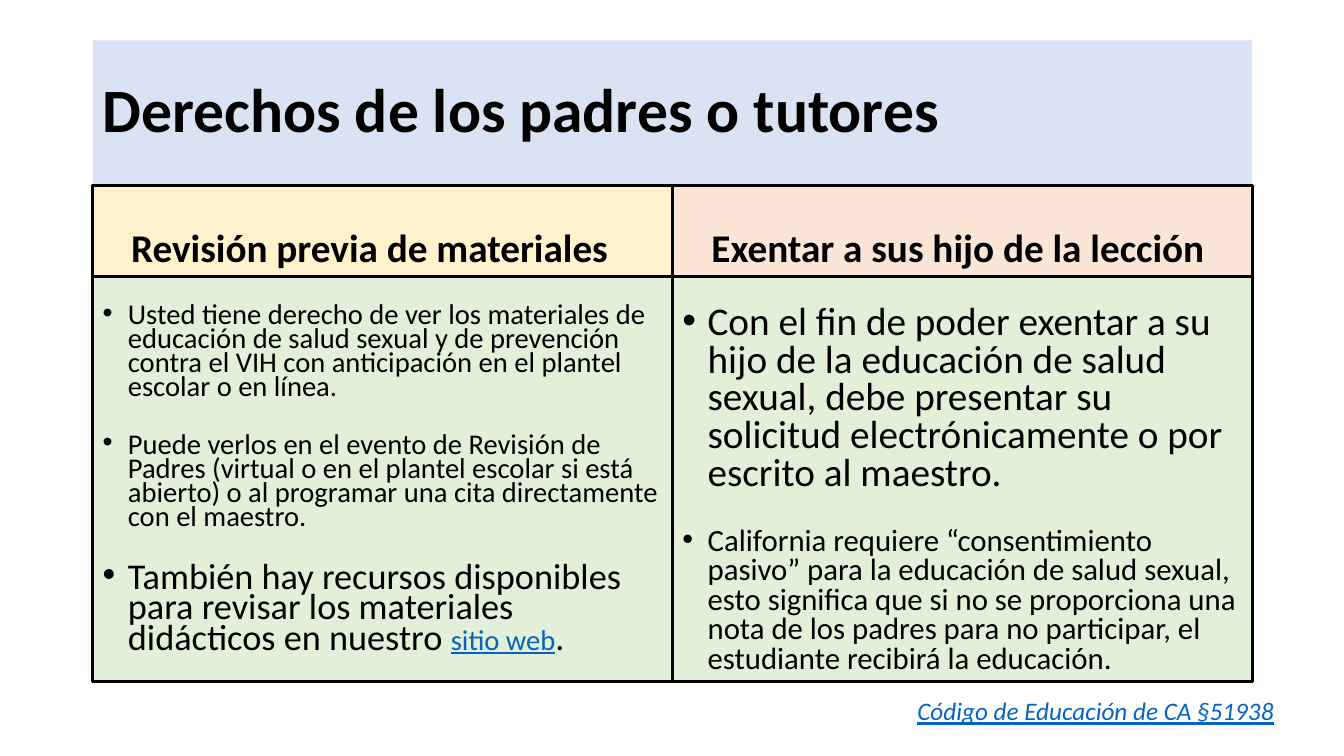
import pptx
import pptx.util
import pptx.dml.color
import pptx.enum.shapes
import pptx.enum.text
import pptx.oxml.ns
import lxml.etree

Pt = pptx.util.Pt
Inches = pptx.util.Inches
ALIGN = pptx.enum.text.PP_ALIGN
ANCHOR = pptx.enum.text.MSO_ANCHOR

WIDE, HIGH = 13.33, 7.5
LEFT, COL = 0.92, 5.75
ROWS = [0.4, 1.84, 2.74, 6.76]  # title, heads, bodies, end
HUES = {"title": "DAE3F3", "view": "FFF2CC", "exempt": "FBE5D6",
        "body": "E2F0D9", "ink": "000000", "link": "0563C1"}


def color(name):
    return pptx.dml.color.RGBColor.from_string(HUES[name])


def apply(target, form):
    for name, value in form.items():
        setattr(target, name, value)


def add_run(para, text, size, hue="ink", **form):
    run = para.add_run()
    run.text = text
    apply(run.font, {"name": "Calibri", "size": Pt(size), **form})
    run.font.color.rgb = color(hue)


def add_panel(slide, box, fill, edge=True, **frame):
    shape = slide.shapes.add_shape(
        pptx.enum.shapes.MSO_SHAPE.RECTANGLE, *map(Inches, box))
    shape.shadow.inherit = False
    shape.fill.solid()
    shape.fill.fore_color.rgb = color(fill)
    if edge:
        shape.line.color.rgb = color("ink")
        shape.line.width = Pt(2.25)
    else:
        shape.line.fill.background()
    apply(shape.text_frame, {"word_wrap": True, **frame})
    return shape.text_frame


def add_head(slide, box, fill, text, size, edge=True, align=ALIGN.CENTER, **frame):
    para = add_panel(slide, box, fill, edge, **frame).paragraphs[0]
    apply(para, {"alignment": align, "line_spacing": 0.9})
    add_run(para, text, size, bold=True)


def add_bullet(para):
    props = para._p.get_or_add_pPr()
    props.set("marL", str(Inches(0.25)))
    props.set("indent", str(-Inches(0.25)))
    for tag, key, value in (("a:buFont", "typeface", "Arial"),
                            ("a:buChar", "char", "•")):
        mark = lxml.etree.SubElement(props, pptx.oxml.ns.qn(tag))
        mark.set(key, value)


def add_body(slide, box, items, lead, gap):
    frame = add_panel(slide, box, "body", vertical_anchor=ANCHOR.TOP,
                      margin_top=Inches(0.29))
    for i, runs in enumerate(items):
        para = frame.add_paragraph() if i else frame.paragraphs[0]
        add_bullet(para)
        apply(para, {"alignment": ALIGN.LEFT, "line_spacing": lead,
                     "space_before": Pt(gap if i else 0)})
        for text, size, *hue in runs:
            add_run(para, text, size, *hue, underline=bool(hue))


def add_source(slide, box, text):
    frame = slide.shapes.add_textbox(*map(Inches, box)).text_frame
    frame.word_wrap = True
    add_run(frame.paragraphs[0], text, 18, "link", italic=True, underline=True)


VIEW = [
    [("Usted tiene derecho de ver los materiales de educación de salud sexual y de "
      "prevención contra el VIH con anticipación en el plantel escolar o en línea.", 20.4)],
    [("Puede verlos en el evento de Revisión de Padres (virtual o en el plantel escolar "
      "si está abierto) o al programar una cita directamente con el maestro.", 20.4)],
    [("También hay recursos disponibles para revisar los materiales didácticos en nuestro ",
      25.9), ("sitio web", 20.4, "link"), (".", 25.9)],
]
EXEMPT = [
    [("Con el fin de poder exentar a su hijo de la educación de salud sexual, debe "
      "presentar su solicitud electrónicamente o por escrito al maestro.", 28)],
    [("California requiere “consentimiento pasivo” para la educación de salud sexual, "
      "esto significa que si no se proporciona una nota de los padres para no participar, "
      "el estudiante recibirá la educación.", 22)],
]
# fill, heading, right margin, bullets, line spacing, gap between bullets
COLS = [("view", "Revisión previa de materiales", 0.36, VIEW, 0.7, 24),
        ("exempt", "Exentar a sus hijo de la lección", 0.19, EXEMPT, 0.8, 24)]


def main():
    deck = pptx.Presentation()
    apply(deck, {"slide_width": Inches(WIDE), "slide_height": Inches(HIGH)})
    slide = deck.slides.add_slide(deck.slide_layouts[6])
    top, head, body, end = ROWS

    # Title band
    add_head(slide, (LEFT, top, 2 * COL, head - top), "title",
             "Derechos de los padres o tutores", 44, edge=False, align=ALIGN.LEFT,
             vertical_anchor=ANCHOR.MIDDLE)

    # Two columns, each a heading over bullets
    for i, (fill, text, pad, items, lead, gap) in enumerate(COLS):
        x = LEFT + i * COL
        add_head(slide, (x, head, COL, body - head), fill, text, 28,
                 vertical_anchor=ANCHOR.BOTTOM, margin_right=Inches(pad))
        add_body(slide, (x, body, COL, end - body), items, lead, gap)

    # Legal source
    add_source(slide, (9, 6.85, 4.04, 0.4), "Código de Educación de CA §51938")
    deck.save("out.pptx")


if __name__ == "__main__":
    main()
